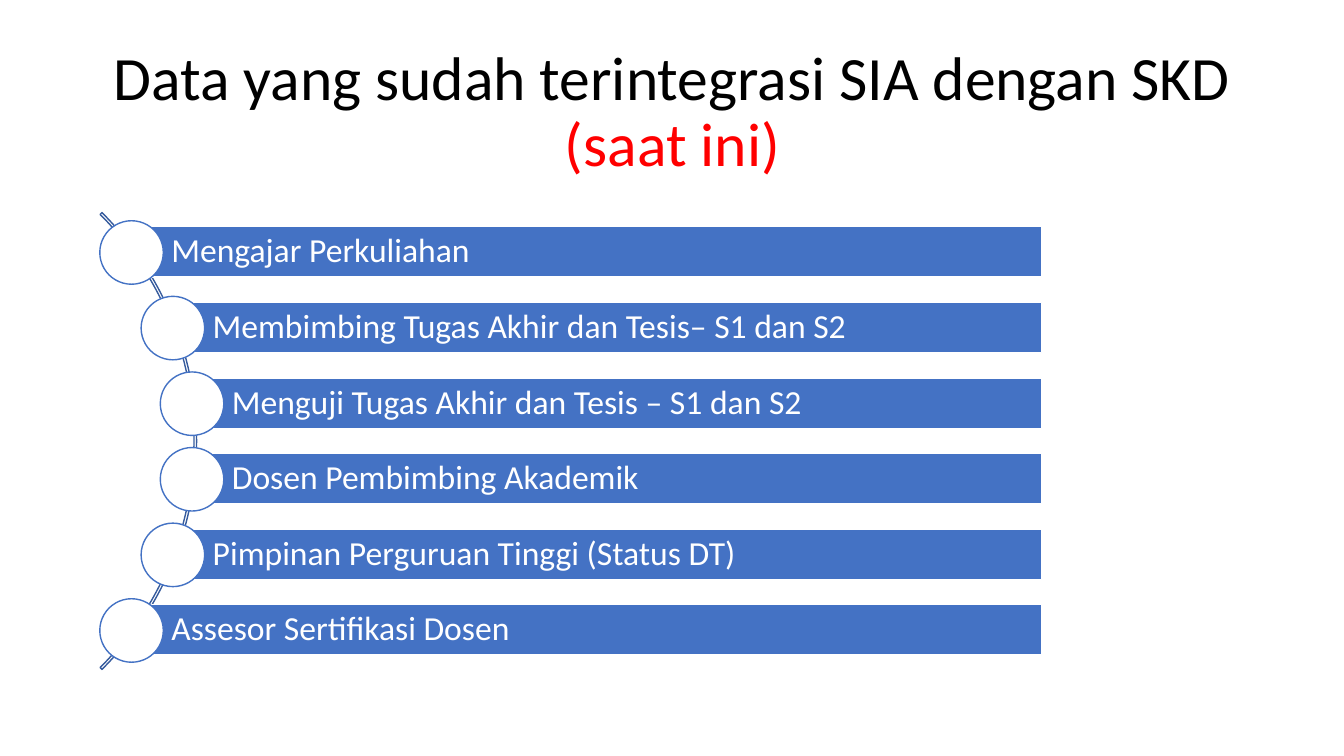
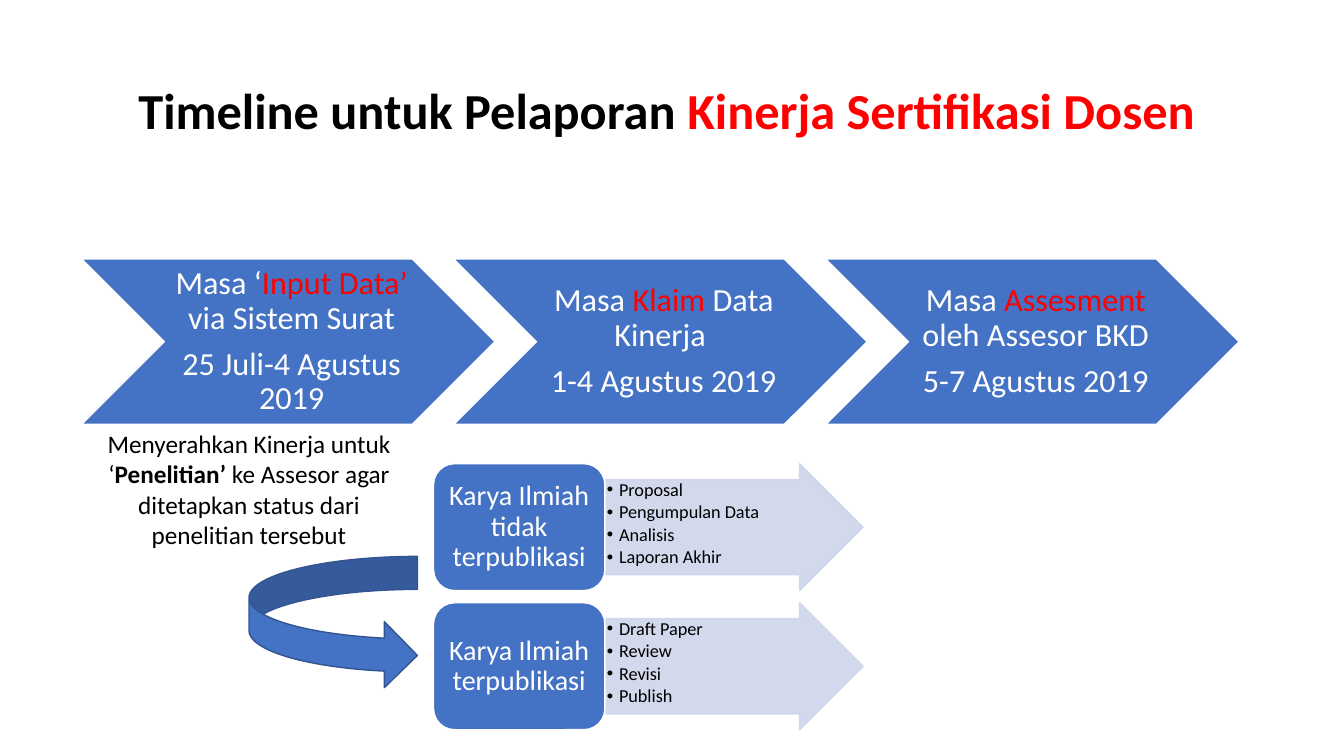
from math import sqrt

from lxml.etree import SubElement
from pptx import Presentation
from pptx.dml.color import RGBColor
from pptx.enum.shapes import MSO_SHAPE
from pptx.enum.text import MSO_ANCHOR, PP_ALIGN
from pptx.oxml.ns import qn
from pptx.util import Pt

PX = 9144  # 100 px to the inch
FONT = "Calibri"
BLACK = RGBColor(0x00, 0x00, 0x00)
WHITE = RGBColor(0xFF, 0xFF, 0xFF)
RED = RGBColor(0xFF, 0x00, 0x00)
BLUE = RGBColor(0x44, 0x72, 0xC4)
ARC_BLUE = RGBColor(0x36, 0x5B, 0x9D)
EDGE_BLUE = RGBColor(0x32, 0x54, 0x91)
PALE_BLUE = RGBColor(0xCF, 0xD5, 0xEA)

# Content: a paragraph is a list of (text, colour, bold) runs
INTEGRATED_TITLE = [("Data yang sudah terintegrasi SIA dengan SKD ", BLACK, False),
                    ("(saat ini)", RED, False)]
INTEGRATED_DATA = [
    "Mengajar Perkuliahan",
    "Membimbing Tugas Akhir dan Tesis– S1 dan S2",
    "Menguji Tugas Akhir dan Tesis – S1 dan S2",
    "Dosen Pembimbing Akademik",
    "Pimpinan Perguruan Tinggi (Status DT)",
    "Assesor Sertifikasi Dosen",
]
TIMELINE_TITLE = [("Timeline untuk Pelaporan ", BLACK, True),
                  ("Kinerja Sertifikasi Dosen ", RED, True)]
PHASES = [
    ([("Masa ‘", WHITE, False), ("Input Data’", RED, False),
      (" via Sistem Surat", WHITE, False)], "25 Juli-4 Agustus 2019"),
    ([("Masa ", WHITE, False), ("Klaim ", RED, False),
      ("Data Kinerja ", WHITE, False)], "1-4 Agustus 2019"),
    ([("Masa ", WHITE, False), ("Assesment", RED, False),
      (" oleh Assesor BKD", WHITE, False)], "5-7 Agustus 2019"),
]
RESEARCH_NOTE = [("Menyerahkan Kinerja untuk ‘", BLACK, False),
                 ("Penelitian’ ", BLACK, True),
                 ("ke Assesor agar ditetapkan status dari penelitian tersebut", BLACK, False)]
PAPER_TYPES = [
    ("Karya Ilmiah tidak terpublikasi",
     ["Proposal", "Pengumpulan Data", "Analisis", "Laporan Akhir"]),
    ("Karya Ilmiah terpublikasi",
     ["Draft Paper", "Review", "Revisi", "Publish"]),
]


def plain(text, color=WHITE):
    return [(text, color, False)]


def write(frame, paragraphs, size, align=PP_ALIGN.CENTER, anchor=MSO_ANCHOR.MIDDLE,
          spacing=0.9, after=0, margins=(10, 5, 10, 5)):
    frame.word_wrap = True
    frame.vertical_anchor = anchor
    (frame.margin_left, frame.margin_top,
     frame.margin_right, frame.margin_bottom) = [m * PX for m in margins]
    for i, runs in enumerate(paragraphs):
        paragraph = frame.paragraphs[0] if i == 0 else frame.add_paragraph()
        paragraph.alignment = align
        paragraph.line_spacing = spacing
        paragraph.space_before = Pt(0)
        paragraph.space_after = Pt(after)
        for text, color, bold in runs:
            run = paragraph.add_run()
            run.text = text
            run.font.name, run.font.size = FONT, Pt(size)
            run.font.bold, run.font.color.rgb = bold, color


def add_block(slide, preset, box, fill, line):
    block = slide.shapes.add_shape(preset, *[v * PX for v in box])
    block.shadow.inherit = False
    if fill is None:
        block.fill.background()
    else:
        block.fill.solid()
        block.fill.fore_color.rgb = fill
    block.line.color.rgb = line
    block.line.width = Pt(1)
    return block


def add_titled_slide(deck, title_runs, size):
    slide = deck.slides.add_slide(deck.slide_layouts[5])
    title = slide.shapes.title
    title.left, title.top, title.width, title.height = [v * PX for v in (92, 40, 1150, 145)]
    write(title.text_frame, [title_runs], size)
    return slide


def make_translucent(block, percent):
    for color in block.element.spPr.iter(qn("a:srgbClr")):
        SubElement(color, qn("a:alpha")).set("val", str(percent * 1000))


def add_bullets(frame, indent):
    for paragraph in frame.paragraphs:
        properties = paragraph._p.get_or_add_pPr()
        properties.set("marL", str(indent * PX))
        properties.set("indent", str(-indent * PX))
        SubElement(properties, qn("a:buFont")).set("typeface", "Arial")
        SubElement(properties, qn("a:buChar")).set("char", "•")


def build_integrated_data(deck):
    slide = add_titled_slide(deck, INTEGRATED_TITLE, 44)
    arc = add_block(slide, MSO_SHAPE.BLOCK_ARC, (-446, 117, 641, 641), None, ARC_BLUE)
    arc.adjustments[0], arc.adjustments[1], arc.adjustments[2] = 189, 27, 0.004

    # Bars start at the centres of dots that follow the arc
    orbit_x, orbit_y, orbit_radius = -124, 437.5, 316
    first_y, pitch, bar_right, bar_height, dot = 250, 75, 1033, 50, 63
    for i, label in enumerate(INTEGRATED_DATA):
        y = first_y + i * pitch
        x = round(orbit_x + sqrt(orbit_radius ** 2 - (y - orbit_y) ** 2))
        bar = add_block(slide, MSO_SHAPE.RECTANGLE,
                        (x, y - bar_height // 2, bar_right - x, bar_height), BLUE, WHITE)
        write(bar.text_frame, [plain(label)], 24, PP_ALIGN.LEFT, after=8,
              margins=(40, 7, 7, 7))
        add_block(slide, MSO_SHAPE.OVAL, (x - dot // 2, y - dot // 2, dot, dot), WHITE, BLUE)


def build_timeline(deck):
    slide = add_titled_slide(deck, TIMELINE_TITLE, 36)

    # Phases
    for i, (phase, dates) in enumerate(PHASES):
        chevron = add_block(slide, MSO_SHAPE.CHEVRON, (81 + i * 369, 257, 410, 164), BLUE, WHITE)
        write(chevron.text_frame, [phase, plain(dates)], 23, after=8, margins=(10, 3, 3, 3))

    # Note under the first phase
    note = slide.shapes.add_textbox(*[v * PX for v in (80, 420, 334, 131)])
    write(note.text_frame, [RESEARCH_NOTE], 18, anchor=MSO_ANCHOR.TOP, spacing=1.0)

    # Paper types with their steps
    for i, (paper_type, steps) in enumerate(PAPER_TYPES):
        top = 460 + i * 138
        steps_arrow = add_block(slide, MSO_SHAPE.RIGHT_ARROW, (601, top, 255, 126),
                                PALE_BLUE, PALE_BLUE)
        steps_arrow.adjustments[0], steps_arrow.adjustments[1] = 0.75, 0.5
        make_translucent(steps_arrow, 90)
        write(steps_arrow.text_frame, [plain(step, BLACK) for step in steps], 13,
              PP_ALIGN.LEFT, MSO_ANCHOR.TOP, after=2, margins=(1, 1, 1, 1))
        add_bullets(steps_arrow.text_frame, 12)
        card = add_block(slide, MSO_SHAPE.ROUNDED_RECTANGLE, (430, top, 170, 126), BLUE, WHITE)
        write(card.text_frame, [plain(paper_type)], 20, after=7, margins=(8, 4, 8, 4))

    add_block(slide, MSO_SHAPE.CURVED_RIGHT_ARROW, (247, 552, 167, 131), BLUE, EDGE_BLUE)


def main():
    deck = Presentation()
    deck.slide_width, deck.slide_height = 1333 * PX, 750 * PX
    build_integrated_data(deck)
    build_timeline(deck)
    deck.save("out.pptx")


if __name__ == "__main__":
    main()
